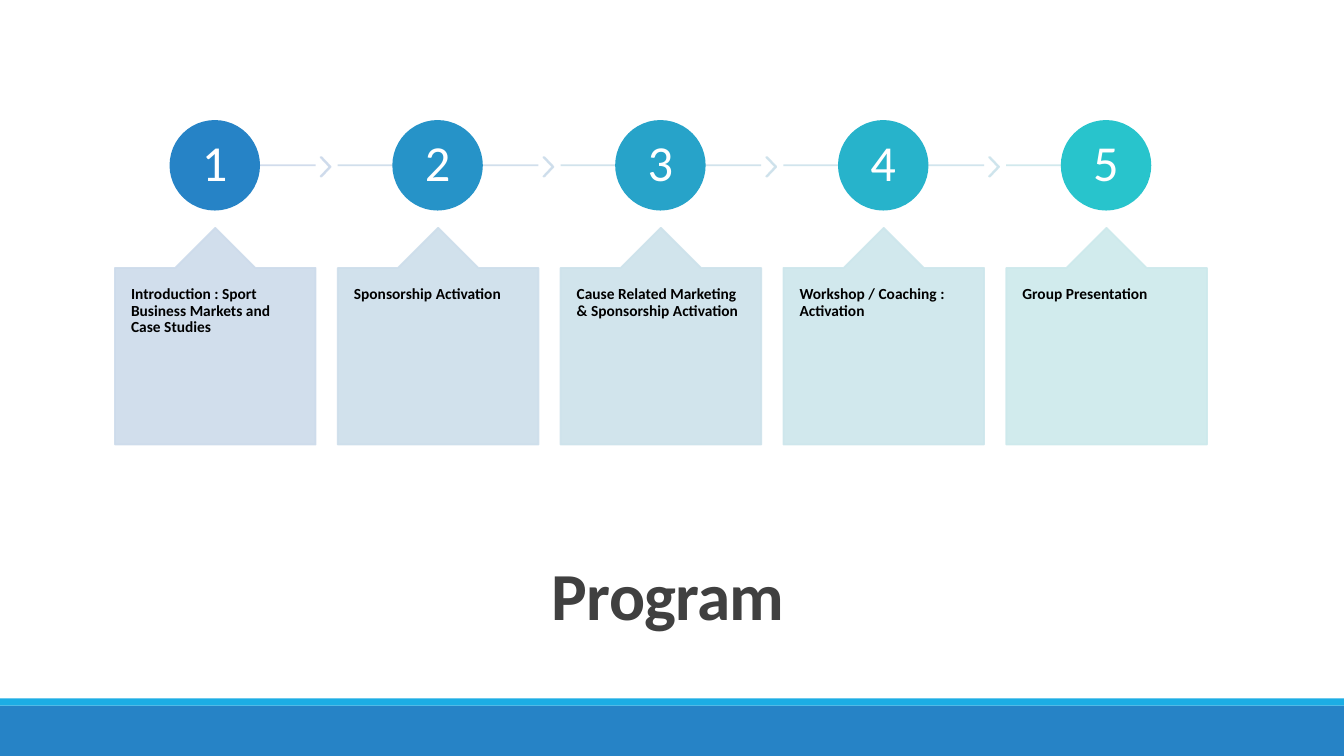
from dataclasses import dataclass

from lxml.etree import SubElement
from pptx import Presentation
from pptx.dml.color import RGBColor
from pptx.enum.shapes import MSO_CONNECTOR, MSO_SHAPE
from pptx.enum.text import MSO_ANCHOR, MSO_AUTO_SIZE, PP_ALIGN
from pptx.oxml.ns import qn
from pptx.util import Inches, Pt


@dataclass(frozen=True)
class Theme:
    font: str = "Calibri"
    title_size: int = 48
    number_size: int = 36
    topic_size: int = 11
    line_width: float = 1.25
    opacity: int = 90
    title: str = "404040"
    number: str = "FFFFFF"
    topic: str = "000000"
    footer: str = "2683C6"
    stripe: str = "1CADE4"
    badges: tuple = ("2683C6", "2693C8", "27A3C9", "27B3CB", "28C4CC")
    links: tuple = ("CDD9EA", "CDDCEB", "CDE0EB", "CDE3EC", "CDE7EC")
    chevrons: tuple = ("CDDAEB", "CDDDEB", "CDE1EB", "CDE4EC")
    cards: tuple = ("CDDBEB", "CDDEEB", "CDE2EB", "CDE6EC", "CDE9EC")


class ProgramSlide:
    def __init__(self, slide, theme):
        self.slide = slide
        self.theme = theme

    def paint(self, fill, color, opacity=100):
        fill.solid()
        fill.fore_color.rgb = RGBColor.from_string(color)
        if opacity < 100:
            solid = fill._xPr.find(qn("a:solidFill"))
            SubElement(solid[0], qn("a:alpha"), val=str(opacity * 1000))

    def outline(self, line, color, opacity=100):
        line.width = Pt(self.theme.line_width)
        self.paint(line.fill, color, opacity)

    def add_text(self, frame, text, size, color, align, anchor, spacing=0.9, bold=False):
        frame.word_wrap = True
        frame.auto_size = MSO_AUTO_SIZE.NONE
        frame.vertical_anchor = anchor
        paragraph = frame.paragraphs[0]
        paragraph.alignment = align
        paragraph.line_spacing = spacing
        run = paragraph.add_run()
        run.text = text
        run.font.name = self.theme.font
        run.font.size = Pt(size)
        run.font.bold = bold
        run.font.color.rgb = RGBColor.from_string(color)
        return run

    def figure(self, kind, box, color, opacity=100, outlined=True, adjust=()):
        figure = self.slide.shapes.add_shape(kind, *map(Inches, box))
        figure.shadow.inherit = False
        for index, value in enumerate(adjust):
            figure.adjustments[index] = value
        self.paint(figure.fill, color, opacity)
        if outlined:
            self.outline(figure.line, color, opacity)
        else:
            figure.line.fill.background()
        return figure

    def inset(self, frame, across, down):
        frame.margin_left = frame.margin_right = Inches(across)
        frame.margin_top = frame.margin_bottom = Inches(down)

    def title(self, text):
        heading = self.slide.shapes.title
        heading.left, heading.top = Inches(1.2), Inches(5.3)
        heading.width, heading.height = Inches(11), Inches(1.3)
        run = self.add_text(heading.text_frame, text, self.theme.title_size, self.theme.title,
                            PP_ALIGN.CENTER, MSO_ANCHOR.MIDDLE, 0.85, True)
        run._r.get_or_add_rPr().set("spc", "-50")

    def band(self, top, height, color):
        self.figure(MSO_SHAPE.RECTANGLE, (0, top, 13.33, height), color, outlined=False)

    def link(self, start, end, color):
        y = Inches(1.64)
        link = self.slide.shapes.add_connector(
            MSO_CONNECTOR.STRAIGHT, Inches(start), y, Inches(end), y)
        self.outline(link.line, color, self.theme.opacity)
        SubElement(link._element.spPr, qn("a:effectLst"))

    def chevron(self, left, color):
        self.figure(MSO_SHAPE.CHEVRON, (left, 1.56, 0.1, 0.19), color,
                    self.theme.opacity, adjust=(0.9,))

    def badge(self, left, number, color):
        badge = self.figure(MSO_SHAPE.OVAL, (left, 1.2, 0.88, 0.88), color)
        self.inset(badge.text_frame, 0.03, 0.03)
        self.add_text(badge.text_frame, str(number), self.theme.number_size, self.theme.number,
                      PP_ALIGN.CENTER, MSO_ANCHOR.MIDDLE)

    def card(self, left, width, topic, color):
        card = self.figure(MSO_SHAPE.UP_ARROW_CALLOUT, (left, 2.26, width, 2.15), color,
                           self.theme.opacity, adjust=(0.5, 0.2, 0.2, 1))
        self.inset(card.text_frame, 0.16, 0.18)
        self.add_text(card.text_frame, topic, self.theme.topic_size, self.theme.topic,
                      PP_ALIGN.LEFT, MSO_ANCHOR.TOP, bold=True)


def main():
    topics = (
        "Introduction : Sport Business Markets and Case Studies",
        "Sponsorship Activation",
        "Cause Related Marketing & Sponsorship Activation",
        "Workshop / Coaching : Activation",
        "Group Presentation",
    )
    first_left, pitch, card_width = 1.14, 2.21, 1.99
    last = len(topics) - 1

    deck = Presentation()
    deck.slide_width, deck.slide_height = Inches(13.33), Inches(7.5)
    theme = Theme()
    program = ProgramSlide(deck.slides.add_slide(deck.slide_layouts[5]), theme)

    program.band(7, 0.5, theme.footer)
    program.band(6.93, 0.07, theme.stripe)
    program.title("Program ")

    for step, topic in enumerate(topics):
        left = first_left + step * pitch
        right = left + card_width
        middle = left + card_width / 2
        program.link(middle if step == 0 else left,
                     middle if step == last else right, theme.links[step])
        if step < last:
            program.chevron(right + 0.05, theme.chevrons[step])
        program.badge(left + 0.55, step + 1, theme.badges[step])
        program.card(left, card_width, topic, theme.cards[step])

    deck.save("out.pptx")


if __name__ == "__main__":
    main()
